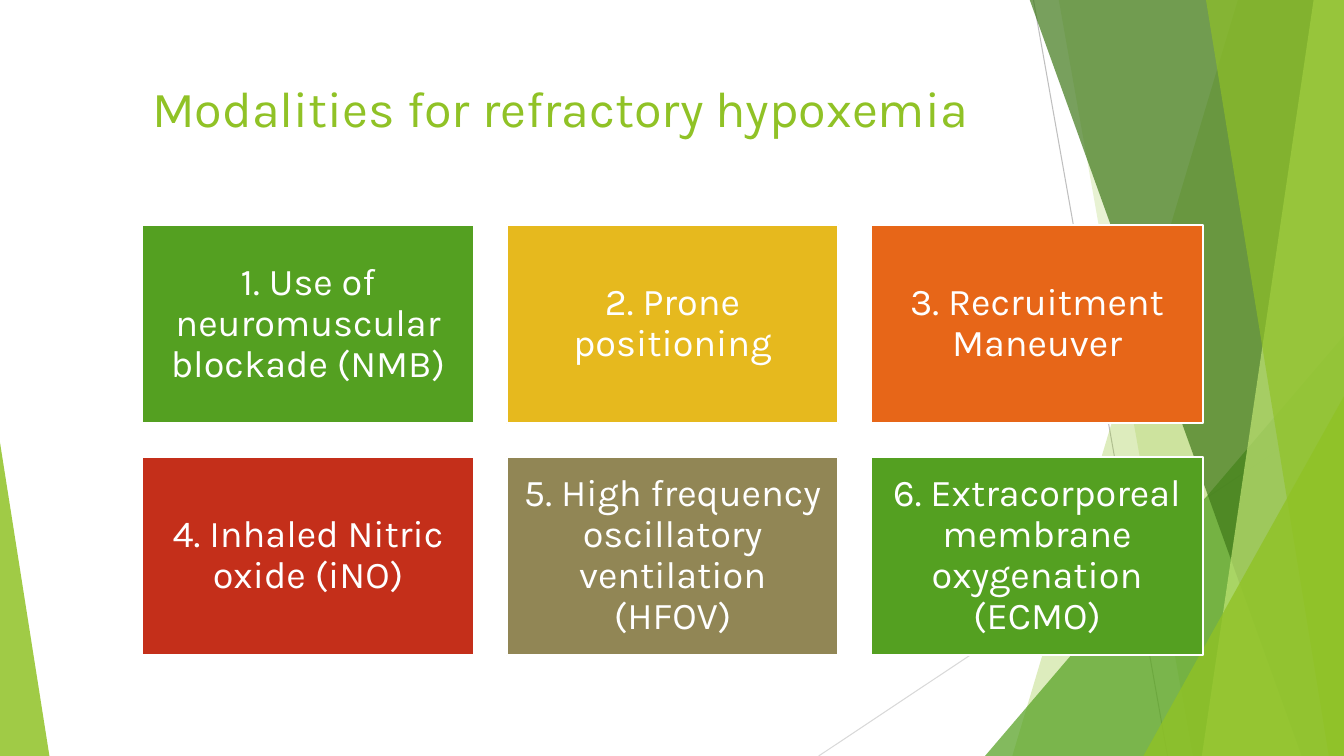
from pptx import Presentation
from pptx.dml.color import RGBColor
from pptx.enum.shapes import MSO_CONNECTOR, MSO_SHAPE
from pptx.enum.text import MSO_ANCHOR, PP_ALIGN
from pptx.oxml.ns import qn
from pptx.util import Inches, Pt
from lxml import etree

RECT, TRI = MSO_SHAPE.RECTANGLE, MSO_SHAPE.ISOSCELES_TRIANGLE
LINE = MSO_CONNECTOR.STRAIGHT
TOP, MID = MSO_ANCHOR.TOP, MSO_ANCHOR.MIDDLE
LEFT, CENTER = PP_ALIGN.LEFT, PP_ALIGN.CENTER
WIDE, HIGH = 13.33, 7.5

HUES = {
    "lime": "90C226", "green": "54A021", "dark": "3F7819", "pale": "C0E474",
    "gold": "E6B91E", "orange": "E76618", "red": "C42F1A", "olive": "918655",
    "white": "FFFFFF", "gray": "BFBFBF", "mist": "D9D9D9",
}


def paint(shape, hue, alpha=100):
    shape.shadow.inherit = False
    shape.fill.solid()
    shape.fill.fore_color.rgb = RGBColor.from_string(HUES[hue])
    shape.line.fill.background()
    if alpha < 100:
        tone = shape.fill._xPr.find(qn("a:solidFill"))[0]
        etree.SubElement(tone, qn("a:alpha"), val=str(alpha * 1000))


def write(shape, text, size=27, hue="white", align=CENTER, anchor=MID,
          inset=0.11, space=0.9):
    frame = shape.text_frame
    frame.word_wrap = True
    frame.vertical_anchor = anchor
    frame.margin_left = frame.margin_right = Inches(inset)
    frame.margin_top = frame.margin_bottom = Inches(min(inset, 0.11))
    para = frame.paragraphs[0]
    para.alignment = align
    para.line_spacing = space
    run = para.add_run()
    run.text = text
    run.font.name = "Karla"
    run.font.size = Pt(size)
    run.font.color.rgb = RGBColor.from_string(HUES[hue])


deck = Presentation()
deck.slide_width, deck.slide_height = Inches(WIDE), Inches(HIGH)
slide = deck.slides.add_slide(deck.slide_layouts[6])
shapes = slide.shapes

# Thin lines behind the facets
for x1, y1, x2, y2, hue in [
    (10.25, 0, 11.58, HIGH, "gray"),
    (WIDE, 4.03, 8.12, HIGH, "mist"),
]:
    line = shapes.add_connector(LINE, Inches(x1), Inches(y1), Inches(x2), Inches(y2))
    line.line.color.rgb = RGBColor.from_string(HUES[hue])
    line.line.width = Pt(0.75)
    etree.SubElement(line._element.spPr, qn("a:effectLst"))

# Facets: panes run from a top x to a foot x and fill out to the right edge;
# triangles stand on the bottom edge with their tip at one side
facets = [
    ("pane", 12.28, 10.04, "lime", 30),
    ("pane", 10.5, 11.83, "lime", 20),
    ("right", 3.56, 4.17, "green", 72),
    ("pane", 10.21, 12.91, "dark", 70),
    ("pane", 13.03, 11.92, "pale", 70),
    ("pane", 11.96, 13.18, "lime", 65),
    ("right", 1.99, 3.57, "lime", 80),
    ("left", 0.49, 3.11, "lime", 85),
]
for kind, a, b, hue, alpha in facets:
    if kind == "pane":
        pen = shapes.build_freeform(Inches(a), Inches(-0.01))
        spots = [(WIDE, -0.01), (WIDE, HIGH), (b, HIGH)]
        pen.add_line_segments([(Inches(x), Inches(y)) for x, y in spots], close=True)
        facet = pen.convert_to_shape()
    else:
        left = WIDE - a if kind == "right" else 0
        facet = shapes.add_shape(TRI, Inches(left), Inches(HIGH - b), Inches(a), Inches(b))
        facet.adjustments[0] = 1 if kind == "right" else 0
    paint(facet, hue, alpha)

# Title
title = shapes.add_textbox(Inches(1.41), Inches(0.67), Inches(11.15), Inches(1.2))
write(title, "Modalities for refractory hypoxemia", size=36, hue="lime",
      align=LEFT, anchor=TOP, inset=0.1, space=1.0)

# Cards, three to a row
cards = [
    ("1. Use of neuromuscular blockade (NMB)", "green"),
    ("2. Prone positioning", "gold"),
    ("3. Recruitment Maneuver", "orange"),
    ("4. Inhaled Nitric oxide (iNO)", "red"),
    ("5. High frequency oscillatory ventilation (HFOV)", "olive"),
    ("6. Extracorporeal membrane oxygenation (ECMO)", "green"),
]
for i, (text, hue) in enumerate(cards):
    row, col = divmod(i, 3)
    card = shapes.add_shape(RECT, Inches(1.41 + 3.615 * col), Inches(2.23 + 2.3 * row),
                            Inches(3.29), Inches(1.97))
    paint(card, hue)
    card.line.color.rgb = RGBColor.from_string(HUES["white"])
    card.line.width = Pt(1.5)
    write(card, text)

deck.save("out.pptx")
